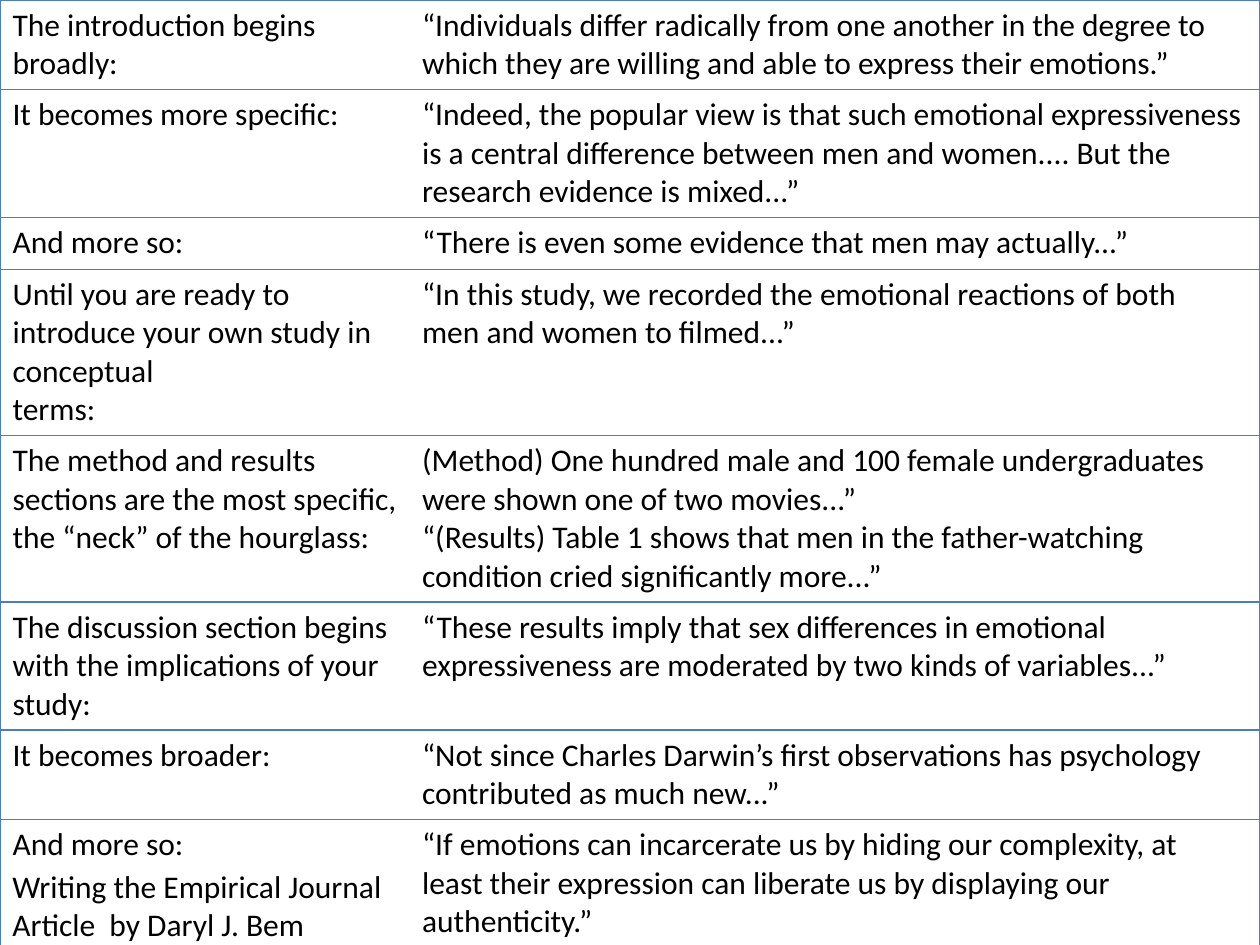
import lxml.etree
import pptx
import pptx.dml.color
import pptx.enum.text
import pptx.oxml.ns
import pptx.util

WIDE, HIGH = 10, 7.5
COLS = [0.325, 0.675]
ROW = 0.41
BLUE = "4B7EBC"
BLACK = "000000"

STEPS = [
    ("The introduction begins broadly:",
     "“Individuals differ radically from one another in the degree to which "
     "they are willing and able to express their emotions.”"),
    ("It becomes more specific:",
     "“Indeed, the popular view is that such emotional expressiveness\n"
     "is a central difference between men and women.... But the research "
     "evidence is mixed...”"),
    ("And more so:",
     "“There is even some evidence that men may actually...”"),
    ("Until you are ready to introduce your own study in conceptual\nterms:",
     "“In this study, we recorded the emotional reactions of both\n"
     "men and women to filmed...”"),
    ("The method and results sections are the most specific, "
     "the “neck” of the hourglass:",
     "(Method) One hundred male and 100 female undergraduates\n"
     "were shown one of two movies...”\n"
     "“(Results) Table 1 shows that men in the father-watching\n"
     "condition cried significantly more...”"),
    ("The discussion section begins with the implications of your\nstudy:",
     "“These results imply that sex differences in emotional expressiveness "
     "are moderated by two kinds of variables...”"),
    ("It becomes broader:",
     "“Not since Charles Darwin’s first observations has psychology\n"
     "contributed as much new...”"),
    ("And more so:",
     "“If emotions can incarcerate us by hiding our complexity, at\n"
     "least their expression can liberate us by displaying our\n"
     "authenticity.”"),
]


def inch(size):
    return pptx.util.Inches(size)


def paint(text):
    return pptx.dml.color.RGBColor.from_string(text)


def write(frame, text, size=18, font="Calibri", color=BLACK):
    frame.text = text
    for para in frame.paragraphs:
        for run in para.runs:
            run.font.size = pptx.util.Pt(size)
            run.font.name = font
            run.font.color.rgb = paint(color)


def edge(cell, sides, color=BLUE, width=0.75):
    props = cell._tc.get_or_add_tcPr()
    name = pptx.oxml.ns.qn
    for spot, side in enumerate("LRTB"):
        line = lxml.etree.Element(name("a:ln" + side))
        line.set("w", str(pptx.util.Pt(width)))
        if side in sides:
            fill = lxml.etree.SubElement(line, name("a:solidFill"))
            lxml.etree.SubElement(fill, name("a:srgbClr"), val=color)
        else:
            lxml.etree.SubElement(line, name("a:noFill"))
        props.insert(spot, line)


def grid(slide, steps):
    tall = inch(7.41)
    frame = slide.shapes.add_table(len(steps), len(COLS), 0, 0, inch(WIDE), tall)
    table = frame.table
    table.first_row = False
    table.horz_banding = False
    for col, share in zip(table.columns, COLS):
        col.width = inch(share * WIDE)
    for row, texts in zip(table.rows, steps):
        row.height = inch(ROW)
        for cell, text, side in zip(row.cells, texts, "LR"):
            write(cell.text_frame, text)
            cell.fill.background()
            edge(cell, side + "TB")
    frame.height = tall


def label(slide, text, left, top, width, height):
    box = slide.shapes.add_textbox(inch(left), inch(top), inch(width), inch(height))
    box.text_frame.word_wrap = True
    box.text_frame.auto_size = pptx.enum.text.MSO_AUTO_SIZE.SHAPE_TO_FIT_TEXT
    write(box.text_frame, text)


def main():
    deck = pptx.Presentation()
    deck.slide_width, deck.slide_height = inch(WIDE), inch(HIGH)
    slide = deck.slides.add_slide(deck.slide_layouts[6])
    grid(slide, STEPS)
    label(slide, "Writing the Empirical Journal Article  by Daryl J. Bem",
          0, 6.83, 3.17, 0.71)
    deck.save("out.pptx")


if __name__ == "__main__":
    main()
